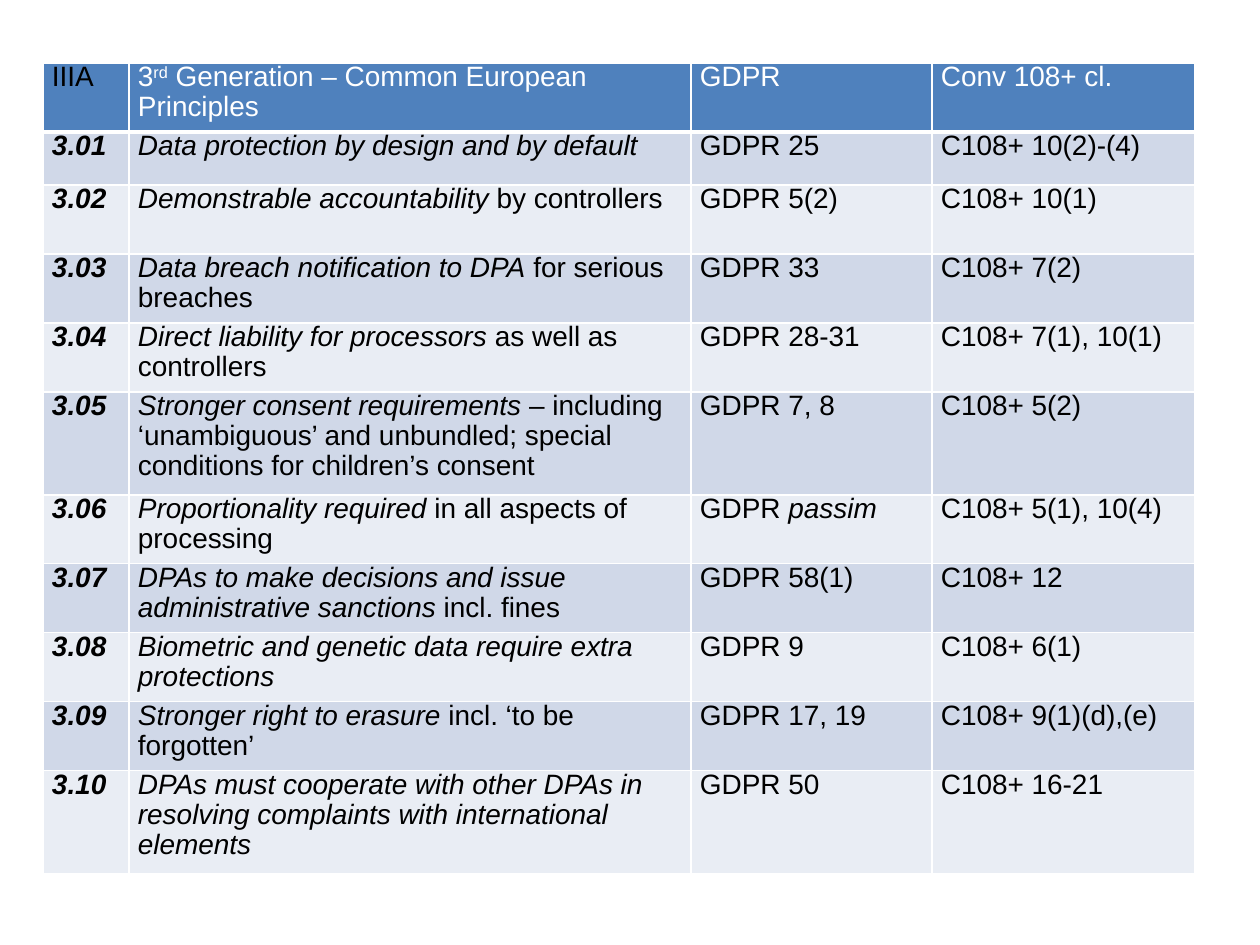
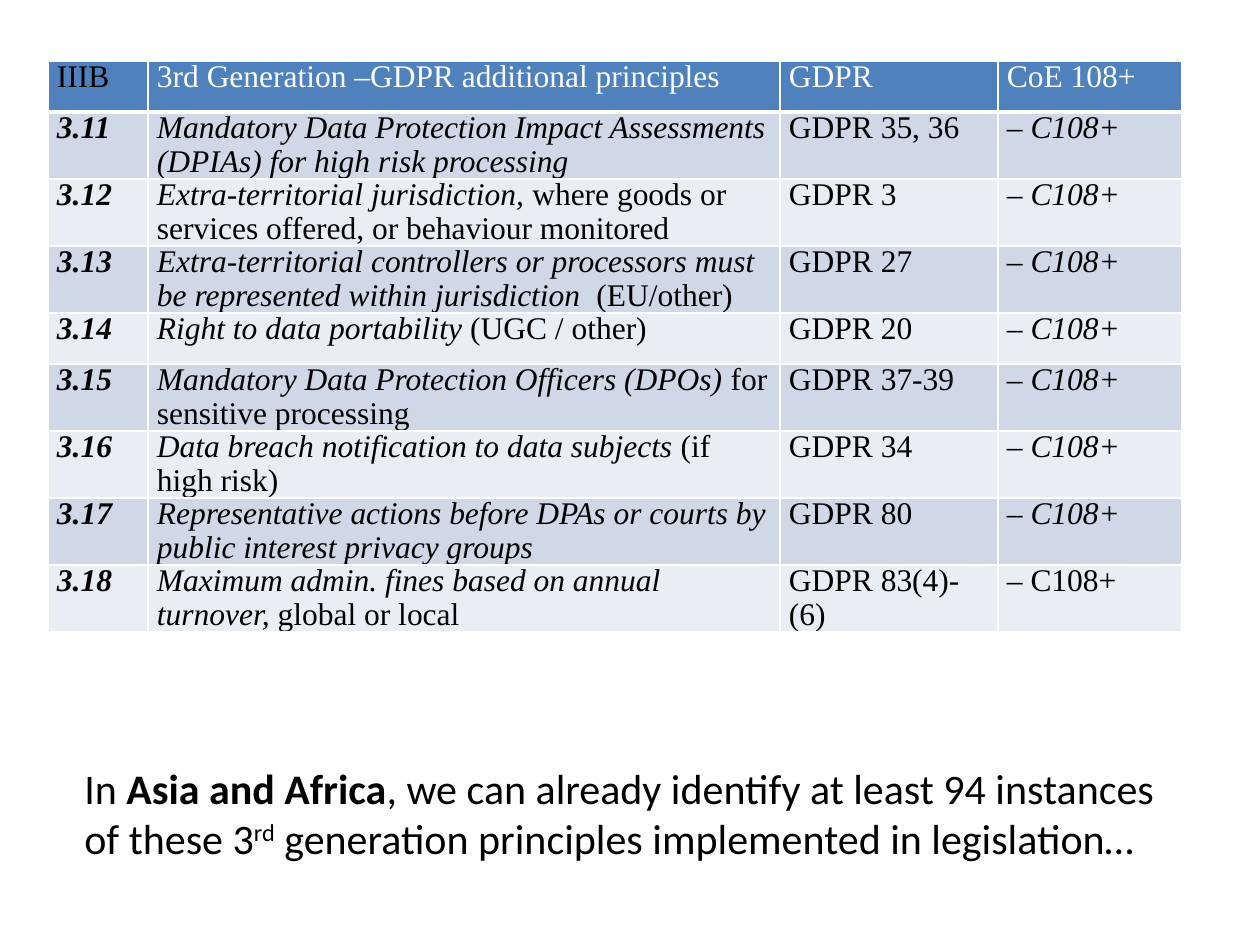
from dataclasses import dataclass
from itertools import groupby

from lxml.etree import SubElement
from pptx import Presentation
from pptx.dml.color import RGBColor
from pptx.enum.text import MSO_AUTO_SIZE
from pptx.oxml.ns import qn
from pptx.util import Pt


@dataclass(frozen=True)
class Theme:
    white: str = "FFFFFF"
    ink: str = "000000"
    head: str = "4F81BD"
    bands: tuple = ("D0D8E8", "E9EDF4")
    thin: int = 1
    thick: int = 3
    after: int = 5
    pitch: float = 0.96
    inset: int = 9


@dataclass(frozen=True)
class Type:
    face: str
    size: int


THEME = Theme()
SANS = Type("Arial", 16)
SERIF = Type("Times New Roman", 18)
NOTE = Type("Calibri", 24)

# Marks switch a style on and off within a text.
BOLD, SLANT, RAISE = MARKS = "*_^"

COMMON = [
    ("IIIA", "3^rd^ Generation – Common European Principles", "GDPR", "Conv 108+ cl."),
    ("_Data protection by design and by default_", "GDPR 25", "C108+ 10(2)-(4)"),
    ("_Demonstrable accountability_ by controllers", "GDPR 5(2)", "C108+ 10(1)"),
    ("_Data breach notification to DPA_ for serious breaches", "GDPR 33", "C108+ 7(2)"),
    ("_Direct liability for processors_ as well as controllers",
     "GDPR 28-31", "C108+ 7(1), 10(1)"),
    ("_Stronger consent requirements_ – including ‘unambiguous’ and unbundled; "
     "special conditions for children’s consent", "GDPR 7, 8", "C108+ 5(2)"),
    ("_Proportionality required_ in all aspects of processing",
     "GDPR _passim_", "C108+ 5(1), 10(4)"),
    ("_DPAs to make decisions and issue administrative sanctions_ incl. fines",
     "GDPR 58(1)", "C108+ 12"),
    ("_Biometric and genetic data require extra protections_", "GDPR 9", "C108+ 6(1)"),
    ("_Stronger right to erasure _incl. ‘to be forgotten’",
     "GDPR 17, 19", "C108+ 9(1)(d),(e)"),
    ("_DPAs must cooperate with other DPAs in resolving complaints with "
     "international elements_", "GDPR 50", "C108+ 16-21"),
]

EXTRA = [
    ("IIIB", "3rd Generation –GDPR additional principles", "GDPR", "CoE 108+"),
    ("_Mandatory Data Protection Impact Assessments (DPIAs) for high risk processing_",
     "GDPR 35, 36", "_– C108+_"),
    ("_Extra-territorial jurisdiction, _where goods or services offered, "
     "or behaviour monitored", "GDPR 3", "_– C108+_"),
    ("_Extra-territorial controllers or processors must be represented within "
     "jurisdiction  _(EU/other)", "GDPR 27", "_– C108+_"),
    ("_Right to data portability _(UGC / other)", "GDPR 20", "_– C108+_"),
    ("_Mandatory Data Protection Officers (DPOs)_ for sensitive processing",
     "GDPR 37-39", "_– C108+_"),
    ("_Data breach notification to data subjects_ (if high risk)",
     "GDPR 34", "_– C108+_"),
    ("_Representative actions before DPAs or courts by public interest privacy groups_",
     "GDPR 80", "– _C108+_"),
    ("_Maximum admin. fines based on annual turnover, _global or local",
     "GDPR 83(4)-(6)", "– C108+"),
]

CLAIM = ("In *Asia and Africa*, we can already identify at least 94 instances "
         "of these 3^rd^ generation principles implemented in legislation…")


def px(count):
    return round(count * 914400 / 126)


def add_runs(para, text, style, color):
    """Add marked text as runs, one for each change of style."""
    active = set()
    for marked, group in groupby(text, lambda char: char in MARKS):
        chunk = "".join(group)
        if marked:
            active ^= set(chunk)
            continue
        run = para.add_run()
        run.text = chunk
        font = run.font
        font.name, font.size = style.face, Pt(style.size)
        font.color.rgb = RGBColor.from_string(color)
        font.bold, font.italic = BOLD in active, SLANT in active
        if RAISE in active:
            run._r.get_or_add_rPr().set("baseline", "30000")


def add_edges(cell, base):
    """Draw white cell borders; base is the width of the bottom one."""
    props = cell._tc.get_or_add_tcPr()
    for side, width in zip("LRTB", (THEME.thin,) * 3 + (base,)):
        line = SubElement(props, qn(f"a:ln{side}"), w=str(Pt(width)))
        fill = SubElement(line, qn("a:solidFill"))
        SubElement(fill, qn("a:srgbClr"), val=THEME.white)


def fill_cell(cell, text, style, color, back, base):
    cell.margin_left = cell.margin_right = px(THEME.inset)
    cell.margin_top = cell.margin_bottom = 0
    add_edges(cell, base)
    cell.fill.solid()
    cell.fill.fore_color.rgb = RGBColor.from_string(back)
    para = cell.text_frame.paragraphs[0]
    para.space_after = Pt(THEME.after)
    para.line_spacing = THEME.pitch
    add_runs(para, text, style, color)


def add_grid(slide, spot, widths, heights, data, first, style):
    """Add a table whose body rows are numbered 3.xx from first on."""
    head, *body = data
    rows = [head] + [(f"*_3.{num:02}", *row) for num, row in enumerate(body, first)]
    left, top = spot
    frame = slide.shapes.add_table(len(rows), len(widths), px(left), px(top),
                                   px(sum(widths)), px(sum(heights)))
    table = frame.table
    for column, width in zip(table.columns, widths):
        column.width = px(width)
    for index, (row, height, texts) in enumerate(zip(table.rows, heights, rows)):
        row.height = px(height)
        back = THEME.bands[(index - 1) % 2] if index else THEME.head
        base = THEME.thin if index else THEME.thick
        for spot, (cell, text) in enumerate(zip(row.cells, texts)):
            color = THEME.ink if index or not spot else THEME.white
            fill_cell(cell, text, style, color, back, base)


def add_note(slide, box, text):
    frame = slide.shapes.add_textbox(*map(px, box)).text_frame
    frame.word_wrap = True
    frame.auto_size = MSO_AUTO_SIZE.SHAPE_TO_FIT_TEXT
    add_runs(frame.paragraphs[0], text, NOTE, THEME.ink)


def main():
    deck = Presentation()
    deck.slide_width, deck.slide_height = px(1260), px(945)
    blank = deck.slide_layouts[6]

    slide = deck.slides.add_slide(blank)
    heights = [69, 53, 69, 69, 69, 103, 69, 69, 69, 69, 103]
    add_grid(slide, (43, 63), (86, 562, 241, 263), heights, COMMON, 1, SANS)

    slide = deck.slides.add_slide(blank)
    add_grid(slide, (48, 61), (100, 632, 218, 184), [51] * len(EXTRA), EXTRA, 11, SERIF)
    add_note(slide, (72, 756, 1110, 115), CLAIM)

    deck.save("out.pptx")


if __name__ == "__main__":
    main()
